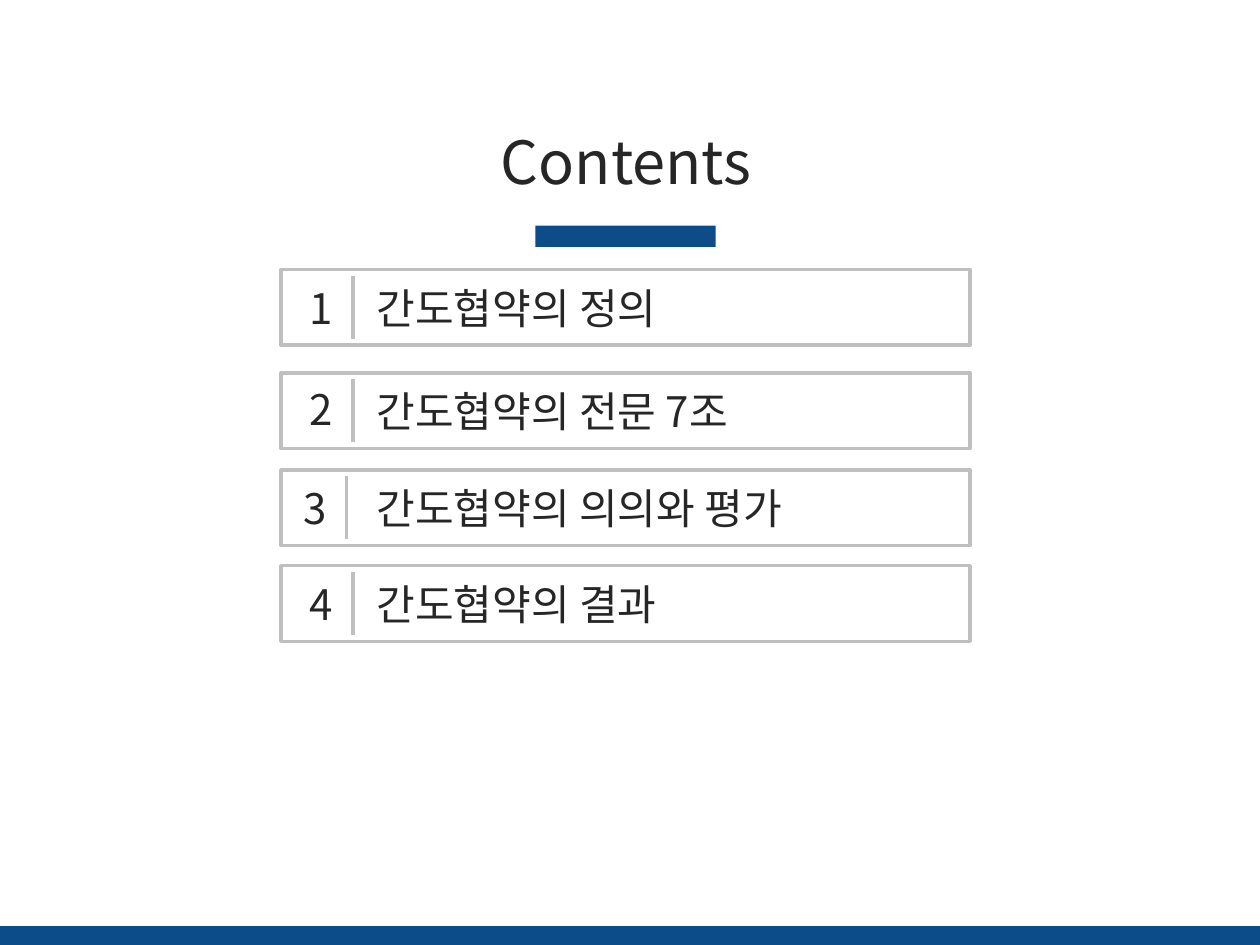
from dataclasses import dataclass

from pptx import Presentation
from pptx.dml.color import RGBColor
from pptx.enum.shapes import MSO_CONNECTOR as CONNECTOR, MSO_SHAPE as SHAPE
from pptx.enum.text import MSO_ANCHOR as ANCHOR, MSO_AUTO_SIZE as AUTO_SIZE, PP_ALIGN as ALIGN
from pptx.oxml.ns import qn
from pptx.util import Inches, Pt


@dataclass(frozen=True)
class Theme:
    font: str = "Noto Sans CJK KR"
    accent: RGBColor = RGBColor.from_string("0C4C89")
    border: RGBColor = RGBColor.from_string("BFBFBF")
    ink: RGBColor = RGBColor.from_string("262626")
    title_size: int = 34
    item_size: int = 24
    border_width: int = 2


@dataclass(frozen=True)
class Item:
    label: str
    top: float
    marker_shift: float = 0
    number_rise: float = 0


THEME = Theme()
ITEMS = [
    Item("간도협약의 정의", 2.14),
    Item("간도협약의 전문 7조", 2.96, number_rise=0.02),
    Item("간도협약의 의의와 평가", 3.73, marker_shift=-0.05),
    Item("간도협약의 결과", 4.49),
]
ITEM_HEIGHT = 0.6
ITEM_PADDING = 0.05
TEXT_HEIGHT = 0.5


def write_text(shape, text, size=THEME.item_size, align=ALIGN.LEFT, color=THEME.ink):
    frame = shape.text_frame
    frame.word_wrap = True
    frame.auto_size = AUTO_SIZE.NONE
    frame.vertical_anchor = ANCHOR.MIDDLE
    paragraph = frame.paragraphs[0]
    paragraph.alignment = align
    run = paragraph.add_run()
    run.text = text
    run.font.size = Pt(size)
    run.font.name = THEME.font
    run.font.color.rgb = color
    east_asian = run.font._element.makeelement(qn("a:ea"), {"typeface": THEME.font})
    run.font._element.find(qn("a:latin")).addnext(east_asian)


def add_title(slide, text, left, top, width, height):
    title = slide.shapes.title
    title.left, title.top = Inches(left), Inches(top)
    title.width, title.height = Inches(width), Inches(height)
    write_text(title, text, size=THEME.title_size, align=ALIGN.CENTER)


def add_rectangle(shapes, left, top, width, height):
    shape = shapes.add_shape(
        SHAPE.RECTANGLE, Inches(left), Inches(top), Inches(width), Inches(height)
    )
    shape.shadow.inherit = False
    return shape


def add_bar(shapes, left, top, width, height):
    bar = add_rectangle(shapes, left, top, width, height)
    bar.fill.solid()
    bar.fill.fore_color.rgb = THEME.accent
    bar.line.fill.background()


def style_border(line):
    line.color.rgb = THEME.border
    line.width = Pt(THEME.border_width)


def add_divider(shapes, x, top, height):
    divider = shapes.add_connector(
        CONNECTOR.STRAIGHT, Inches(x), Inches(top), Inches(x), Inches(top + height)
    )
    style_border(divider.line)
    properties = divider._element.spPr
    properties.append(properties.makeelement(qn("a:effectLst"), {}))


def add_text(shapes, text, left, top, width, **text_format):
    box = shapes.add_textbox(
        Inches(left), Inches(top), Inches(width), Inches(TEXT_HEIGHT)
    )
    write_text(box, text, **text_format)


def add_item(slide, number, item):
    shapes = slide.shapes.add_group_shape().shapes
    frame = add_rectangle(shapes, 2.23, item.top, 5.47, ITEM_HEIGHT)
    frame.fill.background()
    style_border(frame.line)
    text_top = item.top + ITEM_PADDING
    add_divider(shapes, 2.8 + item.marker_shift, text_top, TEXT_HEIGHT)
    add_text(
        shapes, str(number), 2.36 + item.marker_shift, text_top - item.number_rise, 0.3,
        align=ALIGN.CENTER,
    )
    add_text(shapes, item.label, 2.89, text_top, 4.59)


def main():
    presentation = Presentation()
    presentation.slide_width, presentation.slide_height = Inches(10), Inches(7.5)
    slide = presentation.slides.add_slide(presentation.slide_layouts[5])
    add_bar(slide.shapes, 4.25, 1.79, 1.43, 0.17)
    add_title(slide, "Contents", 3.23, 0.94, 3.48, 0.67)
    for number, item in enumerate(ITEMS, start=1):
        add_item(slide, number, item)
    add_bar(slide.shapes, 0, 7.35, 10, 0.15)
    presentation.save("out.pptx")


if __name__ == "__main__":
    main()
